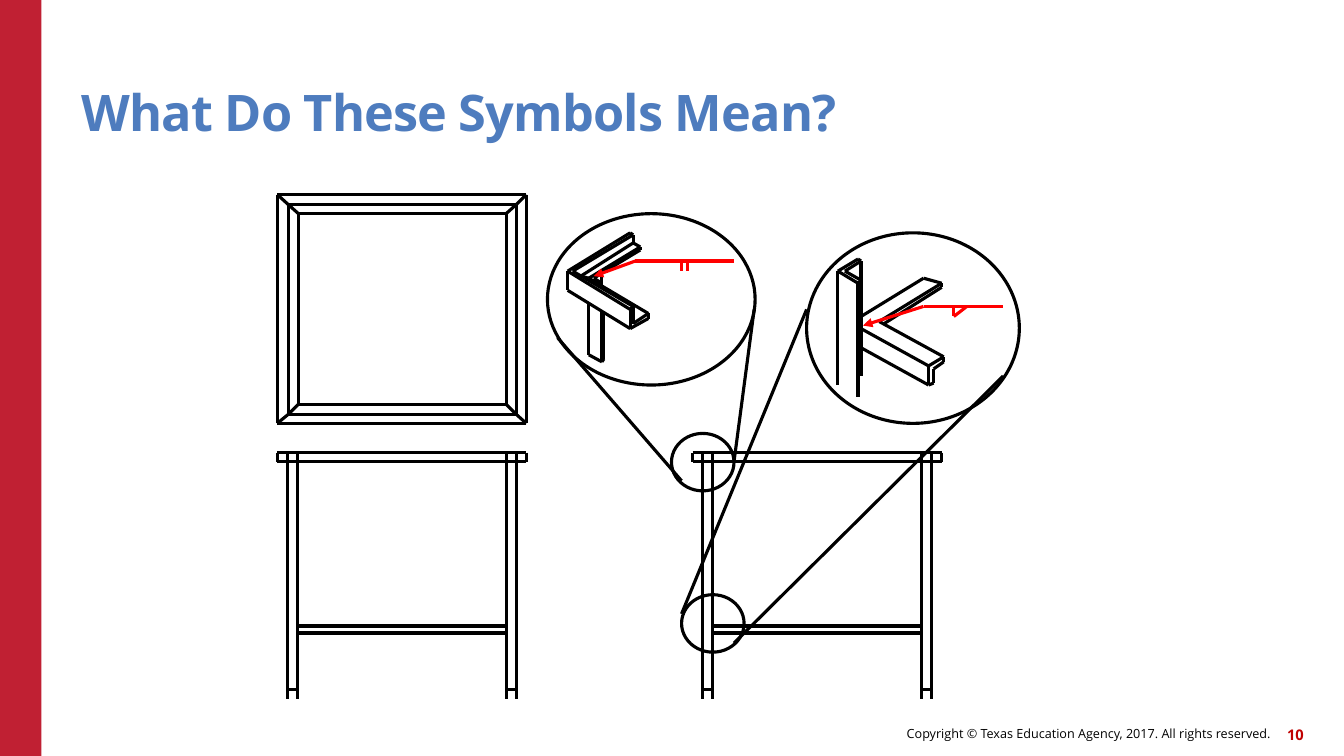
from itertools import pairwise

from lxml.etree import SubElement
from pptx import Presentation
from pptx.dml.color import RGBColor
from pptx.enum.shapes import MSO_CONNECTOR, MSO_SHAPE
from pptx.enum.text import MSO_ANCHOR, PP_ALIGN
from pptx.oxml.ns import qn
from pptx.util import Inches, Pt

BLACK, RED, CRIMSON = "000000", "FF0000", "C02033"
TITLE_BLUE, NUMBER_RED = "4E7CBE", "C00000"

# Each stroke is a run of points joined by straight lines
CORNER_JOINT = [
    # Rear and front angle bars
    [(6.25, 3.07), (5.63, 2.69), (6.25, 2.31), (6.28, 2.33), (5.68, 2.69), (6.28, 3.04)],
    [(5.63, 2.69), (5.63, 2.88), (6.25, 3.26), (6.25, 3.07), (6.28, 3.04),
     (6.28, 3.21), (6.43, 3.11), (6.43, 3.16), (6.25, 3.26)],
    [(6.28, 2.33), (6.28, 2.41), (6.35, 2.45), (6.35, 2.48), (5.97, 2.71)],
    [(6.28, 2.41), (5.76, 2.74), (5.84, 2.76), (6.35, 2.45)],
    [(5.84, 2.76), (6.43, 3.11)],
    # Leg below the corner
    [(5.94, 2.69), (5.97, 2.71), (5.89, 2.76), (5.97, 2.81), (5.94, 2.83)],
    [(5.97, 2.71), (5.97, 2.83)],
    [(5.84, 3), (5.84, 3.52), (5.97, 3.59), (5.99, 3.56), (5.99, 3.09)],
    [(5.97, 3.09), (5.97, 3.59)],
]
BRACE_JOINT = [
    # Upright angle
    [(8.31, 3.82), (8.31, 2.69), (8.51, 2.81), (8.51, 3.94)],
    [(8.31, 2.69), (8.51, 2.57), (8.54, 2.59), (8.54, 3.73)],
    [(8.54, 2.59), (8.38, 2.69), (8.54, 2.78), (8.51, 2.81)],
    # Two braces
    [(8.54, 3.14), (9.16, 2.76), (9.34, 2.81), (9.34, 2.85), (8.77, 3.21)],
    [(9.34, 2.81), (8.72, 3.19), (9.36, 3.54), (9.36, 3.59), (9.26, 3.66),
     (9.26, 3.8), (9.21, 3.82), (9.21, 3.63), (9.36, 3.54)],
    [(8.54, 3.26), (9.21, 3.63)],
    [(8.54, 3.45), (9.21, 3.82)],
]
SQUARE_GROOVE = [
    [(6.3, 2.59), (7.28, 2.59)],
    [(6.76, 2.59), (6.76, 2.69)],
    [(6.82, 2.59), (6.82, 2.69)],
]
FILLET = [
    [(9.16, 3.04), (9.95, 3.04)],
    [(9.46, 3.04), (9.46, 3.14), (9.59, 3.04)],
]
CALLOUT_EDGES = [
    [(7.28, 4.58), (7.48, 3.07)],
    [(6.76, 4.77), (5.53, 3.35)],
    [(6.76, 6.09), (8, 3.07)],
    [(7.28, 6.38), (9.95, 3.73)],
]
# Left, top, width, height
CIRCLES = [
    (6.66, 4.3, 0.62, 0.57),
    (5.43, 2.12, 2.06, 1.7),
    (8, 2.31, 2.11, 1.89),
    (6.76, 5.9, 0.62, 0.57),
]


def color(value):
    return RGBColor.from_string(value)


def add_label(slide, box, text, ink, anchor, spacing=None, **font_format):
    label = slide.shapes.add_textbox(*map(Inches, box))
    frame = label.text_frame
    frame_format = {"word_wrap": True, "vertical_anchor": anchor, "margin_left": 0,
                    "margin_top": 0, "margin_right": 0, "margin_bottom": 0}
    for key, value in frame_format.items():
        setattr(frame, key, value)
    run = frame.paragraphs[0].add_run()
    run.text = text
    for key, value in {"name": "Open Sans", **font_format}.items():
        setattr(run.font, key, value)
    run.font.color.rgb = color(ink)
    if spacing:
        run.font._element.set("spc", str(spacing))
    return frame.paragraphs[0]


def add_line(slide, start, end, ink=BLACK, arrow=False):
    line = slide.shapes.add_connector(MSO_CONNECTOR.STRAIGHT, *map(Inches, (*start, *end)))
    line.line.color.rgb = color(ink)
    line.line.width = Pt(2.25)
    properties = line._element.spPr
    if arrow:
        SubElement(properties.find(qn("a:ln")), qn("a:tailEnd"), type="triangle")
    SubElement(properties, qn("a:effectLst"))


def add_strokes(slide, strokes, ink=BLACK):
    for stroke in strokes:
        for start, end in pairwise(stroke):
            add_line(slide, start, end, ink)


def add_circle(slide, box):
    circle = slide.shapes.add_shape(MSO_SHAPE.OVAL, *map(Inches, box))
    circle.shadow.inherit = False
    circle.fill.background()
    circle.line.color.rgb = color(BLACK)
    circle.line.width = Pt(2.25)


def rectangle(left, top, right, bottom):
    return [(left, top), (right, top), (right, bottom), (left, bottom), (left, top)]


def add_top_view(slide):
    frames = [rectangle(2.75, 1.93, 5.22, 4.2),
              rectangle(2.86, 2.03, 5.12, 4.11),
              rectangle(2.96, 2.12, 5.02, 4.01)]
    add_strokes(slide, frames)
    # Mitred corners run through all three frames
    add_strokes(slide, list(zip(*frames))[:4])


def add_side_view(slide, left):
    add_strokes(slide, [rectangle(left, 4.49, left + 2.47, 4.58)])
    for leg in (left + 0.1, left + 2.27):
        add_strokes(slide, [[(x, 4.49), (x, 6.93)] for x in (leg, leg + 0.1)])
        add_line(slide, (leg, 6.84), (leg + 0.1, 6.84))
    # Lower rail
    for y in (6.21, 6.28):
        add_line(slide, (left + 0.2, y), (left + 2.27, y))


def main():
    prs = Presentation()
    prs.slide_width, prs.slide_height = Inches(13.33), Inches(7.5)
    slide = prs.slides.add_slide(prs.slide_layouts[6])

    # Side band, title and footer
    band = slide.shapes.add_shape(MSO_SHAPE.RECTANGLE, 0, 0, Inches(0.41), Inches(7.5))
    band.shadow.inherit = False
    band.fill.solid()
    band.fill.fore_color.rgb = color(CRIMSON)
    band.line.fill.background()
    title = add_label(slide, (0.81, 0.45, 11.02, 0.96), "What Do These Symbols Mean?",
                      TITLE_BLUE, MSO_ANCHOR.BOTTOM, spacing=-60, size=Pt(36), bold=True)
    title.line_spacing = 0.9
    rights = add_label(slide, (6.14, 7.12, 6.46, 0.32),
                       "Copyright © Texas Education Agency, 2017. All rights reserved.",
                       BLACK, MSO_ANCHOR.MIDDLE, size=Pt(9))
    number = add_label(slide, (12.51, 7.13, 0.42, 0.32), "10", NUMBER_RED,
                       MSO_ANCHOR.MIDDLE, size=Pt(10.5), bold=True)
    rights.alignment = number.alignment = PP_ALIGN.RIGHT

    # Table views
    add_top_view(slide)
    for left in (2.75, 6.87):
        add_side_view(slide, left)

    # Enlarged joints
    for strokes in (CORNER_JOINT, BRACE_JOINT, CALLOUT_EDGES):
        add_strokes(slide, strokes)
    for box in CIRCLES:
        add_circle(slide, box)

    # Weld symbols
    for symbol in (SQUARE_GROOVE, FILLET):
        add_strokes(slide, symbol, RED)
    add_line(slide, (6.3, 2.59), (5.89, 2.74), RED, arrow=True)
    add_line(slide, (9.16, 3.04), (8.56, 3.23), RED, arrow=True)

    prs.save("out.pptx")


if __name__ == "__main__":
    main()
